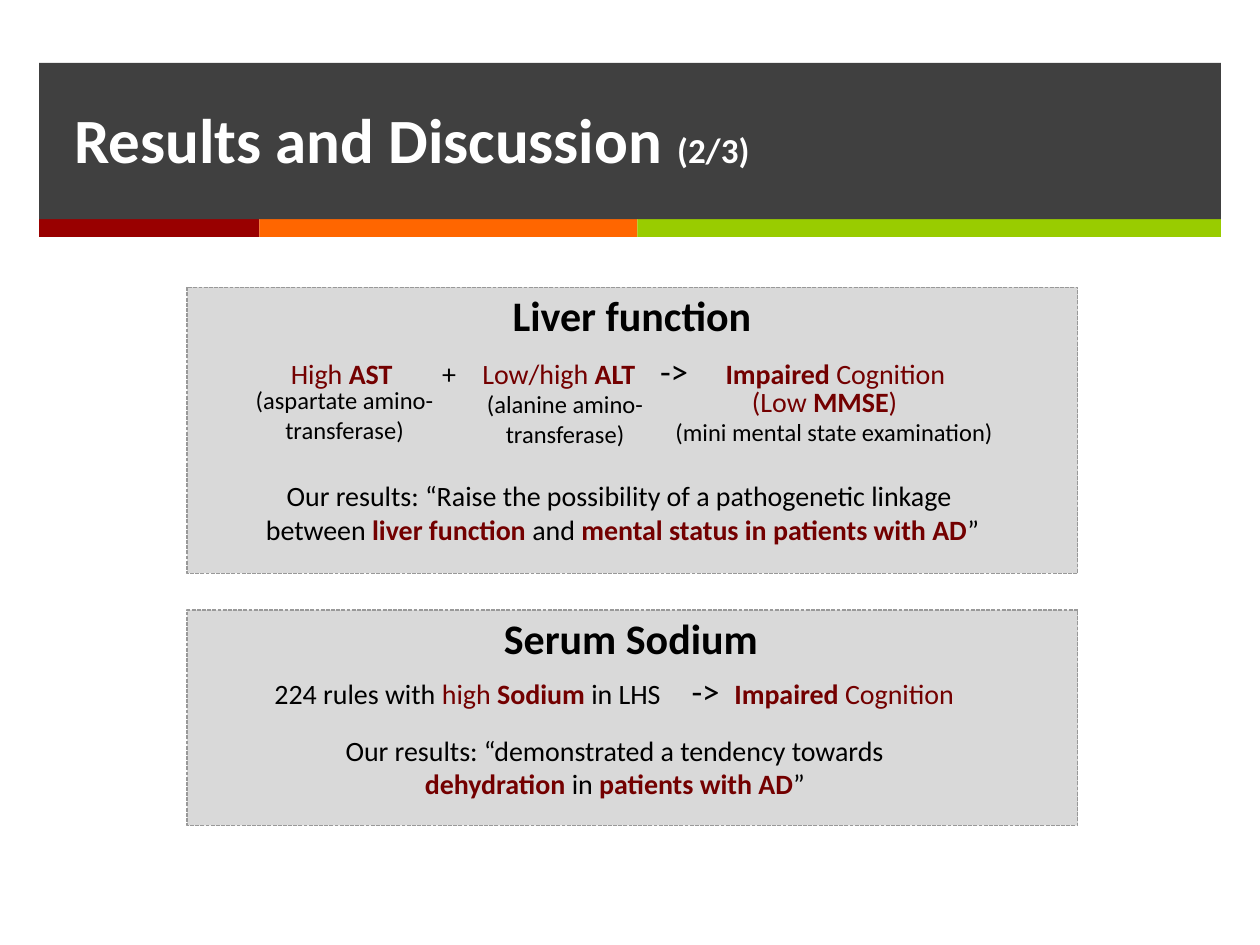
import pptx
import pptx.dml.color
import pptx.enum.dml
import pptx.enum.shapes
import pptx.enum.text
import pptx.oxml
import pptx.oxml.ns
import pptx.util

Inches = pptx.util.Inches
COLORS = {
    "white": "FFFFFF", "black": "000000", "accent": "730000",
    "header": "404040", "red": "990000", "orange": "FF6600", "green": "99CC00",
    "panel": "D9D9D9", "border": "999999",
}
LEFT = pptx.enum.text.PP_ALIGN.LEFT
CENTER = pptx.enum.text.PP_ALIGN.CENTER

presentation = pptx.Presentation()
presentation.slide_width = Inches(10)
presentation.slide_height = Inches(7.5)
slide = presentation.slides.add_slide(presentation.slide_layouts[6])


def add_rectangle(left, top, width, height, fill, border=None):
    shape = slide.shapes.add_shape(
        pptx.enum.shapes.MSO_SHAPE.RECTANGLE,
        Inches(left), Inches(top), Inches(width), Inches(height))
    shape.shadow.inherit = False
    shape.fill.solid()
    shape.fill.fore_color.rgb = pptx.dml.color.RGBColor.from_string(COLORS[fill])
    if border:
        shape.line.color.rgb = pptx.dml.color.RGBColor.from_string(COLORS[border])
        shape.line.width = pptx.util.Pt(0.75)
        shape.line.dash_style = pptx.enum.dml.MSO_LINE.SQUARE_DOT
    else:
        shape.line.fill.background()


def add_text(box, paragraphs, size, align=LEFT, spacing=None, wrap=True, tabs=()):
    """Each run is (text, colour, bold) with an optional size of its own."""
    shape = slide.shapes.add_textbox(*[Inches(length) for length in box])
    frame = shape.text_frame
    frame.word_wrap = wrap
    frame.auto_size = pptx.enum.text.MSO_AUTO_SIZE.SHAPE_TO_FIT_TEXT
    for index, runs in enumerate(paragraphs):
        paragraph = frame.paragraphs[0] if index == 0 else frame.add_paragraph()
        paragraph.alignment = align
        if spacing:
            paragraph.line_spacing = spacing
        if tabs:
            properties = paragraph._p.get_or_add_pPr()
            tab_list = pptx.oxml.parse_xml(
                "<a:tabLst %s/>" % pptx.oxml.ns.nsdecls("a"))
            for position in tabs[index]:
                tab = tab_list.makeelement(pptx.oxml.ns.qn("a:tab"), {
                    "pos": str(int(Inches(position))), "algn": "l"})
                tab_list.append(tab)
            properties.append(tab_list)
        for text, color, bold, *own_size in runs:
            run = paragraph.add_run()
            run.text = text
            run.font.name = "Calibri"
            run.font.size = pptx.util.Pt(own_size[0] if own_size else size)
            run.font.bold = bold
            run.font.color.rgb = pptx.dml.color.RGBColor.from_string(COLORS[color])


# Header band with the three-colour stripe
stripe_left = 0.31
for width, color in ((1.75, "red"), (3, "orange"), (4.63, "green")):
    add_rectangle(stripe_left, 1.73, width, 0.15, color)
    stripe_left += width
add_rectangle(0.31, 0.5, 9.38, 1.24, "header")
add_text((0.49, 0.75, 7.23, 0.71), [[
    ("Results and Discussion ", "white", True),
    ("(2/3)", "white", True, 20)]], 36)

# Panels and their headings
for top, height, heading, heading_left, heading_top in (
        (2.28, 2.27, "Liver function", 3.97, 2.25),
        (4.84, 1.71, "Serum Sodium", 3.9, 4.81)):
    add_rectangle(1.485, top, 7.07, height, "panel", "border")
    add_text((heading_left, heading_top, 2.52, 0.5),
             [[(heading, "black", True)]], 24)

# Liver function: rule, with tab stops for its terms
add_text((2.01, 2.79, 6.01, 0.59), [
    [("\tHigh", "accent", False), (" AST", "accent", True),
     ("\t+\t", "black", False),
     ("Low/high ", "accent", False), ("ALT", "accent", True),
     ("\t->\t", "black", False, 20),
     ("Impaired ", "accent", True), ("Cognition", "accent", False)],
    [("\t(Low", "accent", False), (" MMSE", "accent", True),
     (")", "accent", False)],
], 16, spacing=0.8, tabs=((0.2, 1.4, 1.72, 3.13, 3.65), (3.86,)))

# Liver function: what the abbreviations stand for
for box, lines, wrap in (
        ((1.92, 3.01, 1.63, 0.57), ("(aspartate amino-", "transferase)"), False),
        ((3.75, 3.04, 1.47, 0.57), ("(alanine amino-", "transferase)"), False),
        ((5.22, 3.26, 2.8, 0.34), ("(mini mental state examination)",), True)):
    add_text(box, [[(line, "black", False)] for line in lines], 14,
             align=CENTER, wrap=wrap)

# Liver function: conclusion
add_text((1.77, 3.75, 6.34, 0.64), [
    [("Our results: “Raise the possibility of a pathogenetic linkage ",
      "black", False)],
    [("between ", "black", False), ("liver function", "accent", True),
     (" and ", "black", False),
     ("mental status in patients with AD", "accent", True),
     ("”", "black", False)],
], 16, align=CENTER)

# Serum sodium: rule
add_text((2.08, 5.37, 4.22, 0.33), [[
    ("224 rules with ", "black", False), ("high ", "accent", False),
    ("Sodium ", "accent", True), ("in LHS", "black", False)]], 16, spacing=0.8)
add_text((5.39, 5.33, 2.36, 0.38), [[
    ("->\t", "black", False, 20), ("Impaired ", "accent", True),
    ("Cognition", "accent", False)]], 16, spacing=0.8, tabs=((0.34,),))

# Serum sodium: conclusion
add_text((2.61, 5.77, 4.54, 0.64), [
    [("Our results: “demonstrated a tendency towards", "black", False)],
    [("dehydration", "accent", True), (" in ", "black", False),
     ("patients with AD", "accent", True), ("”", "black", False)],
], 16, align=CENTER)

presentation.save("out.pptx")
